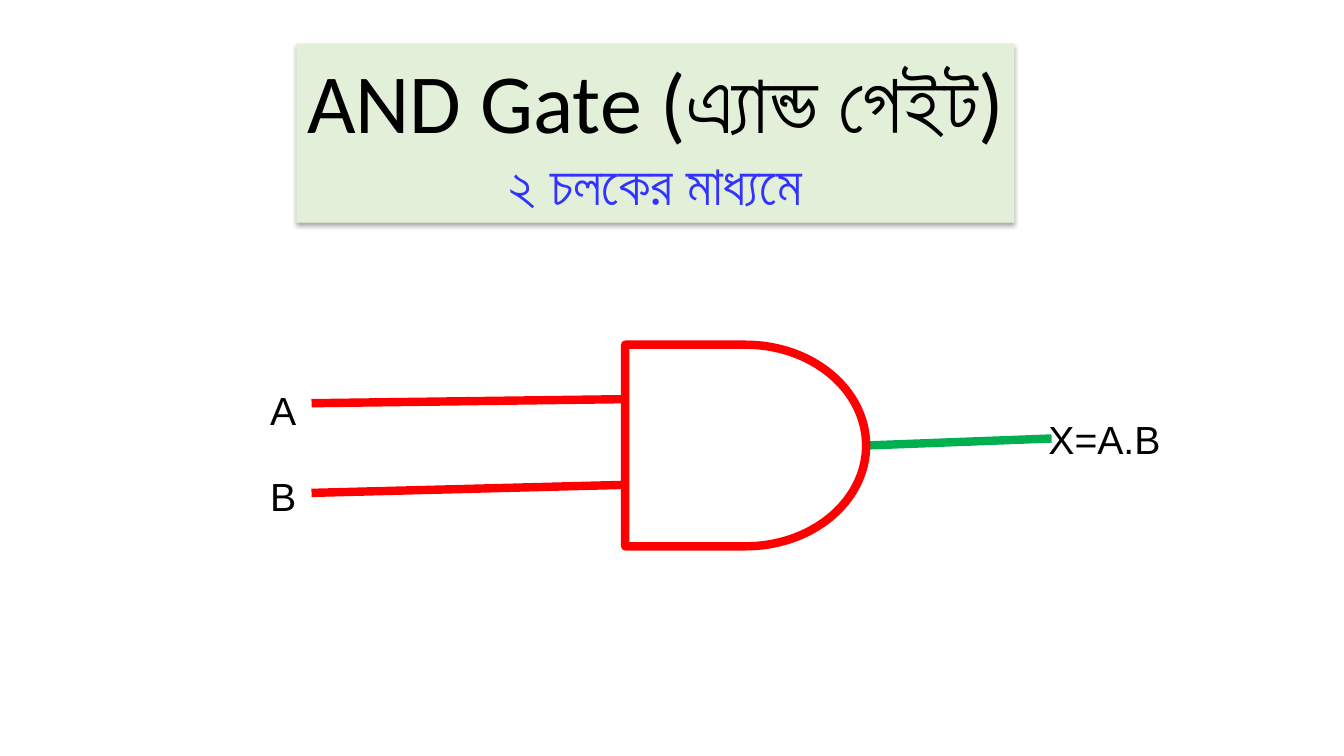
from lxml.etree import SubElement
from pptx import Presentation
from pptx.dml.color import RGBColor
from pptx.enum.shapes import MSO_CONNECTOR as Connector, MSO_SHAPE as Shape
from pptx.enum.text import MSO_ANCHOR as Anchor, MSO_AUTO_SIZE as AutoSize, PP_ALIGN as Align
from pptx.oxml import parse_xml
from pptx.oxml.ns import nsdecls, qn
from pptx.util import Pt

PX = 9144
BLACK = RGBColor(0x00, 0x00, 0x00)
RED = RGBColor(0xFF, 0x00, 0x00)
GREEN = RGBColor(0x00, 0xB0, 0x50)
BLUE = RGBColor(0x33, 0x33, 0xFF)
PALE_GREEN = RGBColor(0xE2, 0xF0, 0xD9)
WIRE_WIDTH = Pt(6)
SHADOW = (
    f'<a:effectLst {nsdecls("a")}>'
    '<a:outerShdw blurRad="44450" dist="27940" dir="5400000" algn="ctr" rotWithShape="0">'
    '<a:srgbClr val="000000"><a:alpha val="32000"/></a:srgbClr>'
    '</a:outerShdw></a:effectLst>'
)


def px(*lengths):
    """Turn pixel lengths into EMU."""
    return [length * PX for length in lengths]


def style_paragraph(para, text, size, color, align=Align.LEFT, font="Calibri"):
    """Fill a paragraph with text in one font."""
    para.text = text
    para.alignment = align
    para.font.name = font
    para.font.size = Pt(size)
    para.font.color.rgb = color


def add_title(page, left, top, width, height):
    """Draw the shadowed title panel with its two centred lines."""
    panel = page.shapes.add_shape(Shape.RECTANGLE, *px(left, top, width, height))
    panel.fill.solid()
    panel.fill.fore_color.rgb = PALE_GREEN
    panel.line.fill.background()
    panel._element.spPr.append(parse_xml(SHADOW))
    frame = panel.text_frame
    frame.word_wrap = True
    frame.vertical_anchor = Anchor.MIDDLE
    style_paragraph(frame.paragraphs[0], "AND Gate (এ্যান্ড গেইট)", 60, BLACK, Align.CENTER)
    style_paragraph(frame.add_paragraph(), "২ চলকের মাধ্যমে", 40, BLUE, Align.CENTER)


def add_wire(page, start, end, color):
    """Draw a thick straight wire between two points."""
    wire = page.shapes.add_connector(Connector.STRAIGHT, *px(*start, *end))
    wire.line.color.rgb = color
    wire.line.width = WIRE_WIDTH
    SubElement(wire._element.spPr, qn("a:effectLst"))
    return wire


def add_label(page, text, left, top, width):
    """Write the name of a signal."""
    box = page.shapes.add_textbox(*px(left, top, width, 57))
    box.text_frame.word_wrap = False
    box.text_frame.auto_size = AutoSize.SHAPE_TO_FIT_TEXT
    style_paragraph(box.text_frame.paragraphs[0], text, 28, BLACK, font="Arial")


def add_gate(page, left, top, width, height):
    """Draw the AND gate with its inputs, output and labels."""
    for name, label_y, start_y, end_y in (("A", 36, 58, 54), ("B", 122, 147, 139)):
        add_wire(page, (left - 311, top + start_y), (left, top + end_y), RED)
        add_label(page, name, left - 362, top + label_y, 46)
    right, middle = left + width, top + height // 2
    output = add_wire(page, (right, middle), (right + 184, middle - 7), GREEN)
    gate = page.shapes.add_shape(Shape.FLOWCHART_DELAY, *px(left, top, width, height))
    gate.shadow.inherit = False
    gate.fill.background()
    gate.line.color.rgb = RED
    gate.line.width = WIRE_WIDTH
    output.begin_connect(gate, 3)
    add_label(page, "X=A.B", right + 171, middle - 35, 131)


def main():
    """Build the slide and save it."""
    deck = Presentation()
    deck.slide_width, deck.slide_height = px(1333, 750)
    page = deck.slides.add_slide(deck.slide_layouts[6])
    add_gate(page, 620, 342, 239, 200)
    add_title(page, 294, 43, 712, 178)
    deck.save("out.pptx")


if __name__ == "__main__":
    main()
